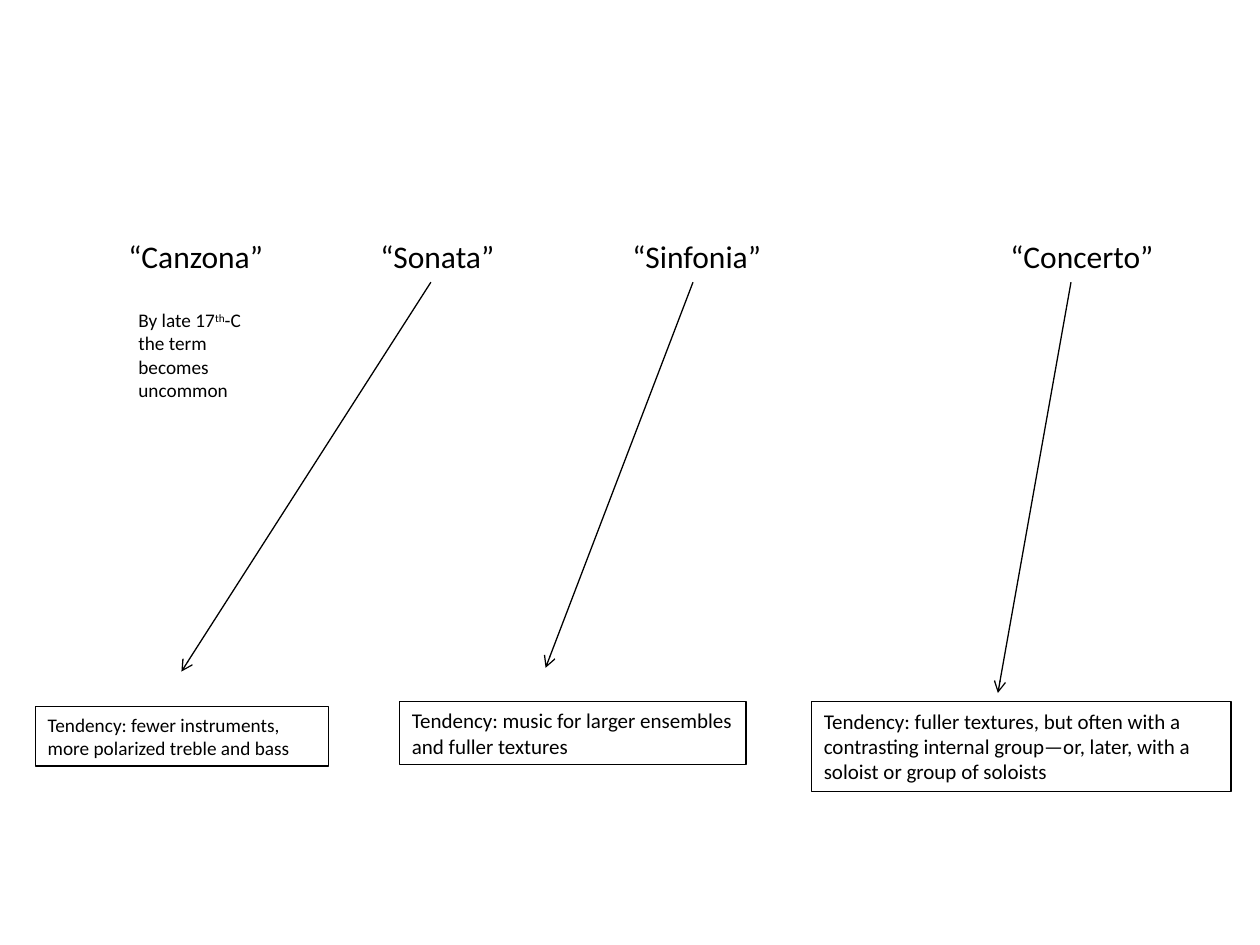
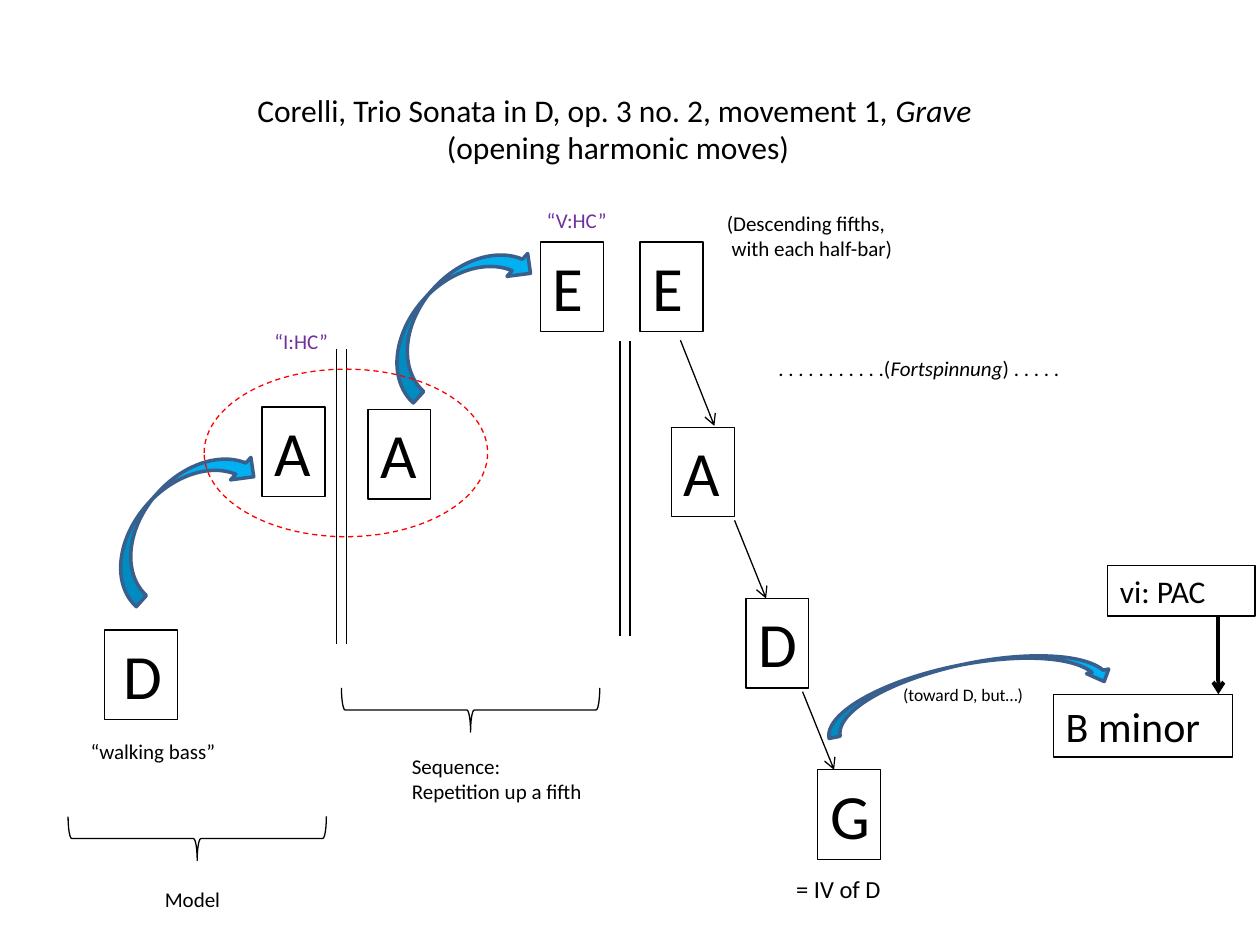
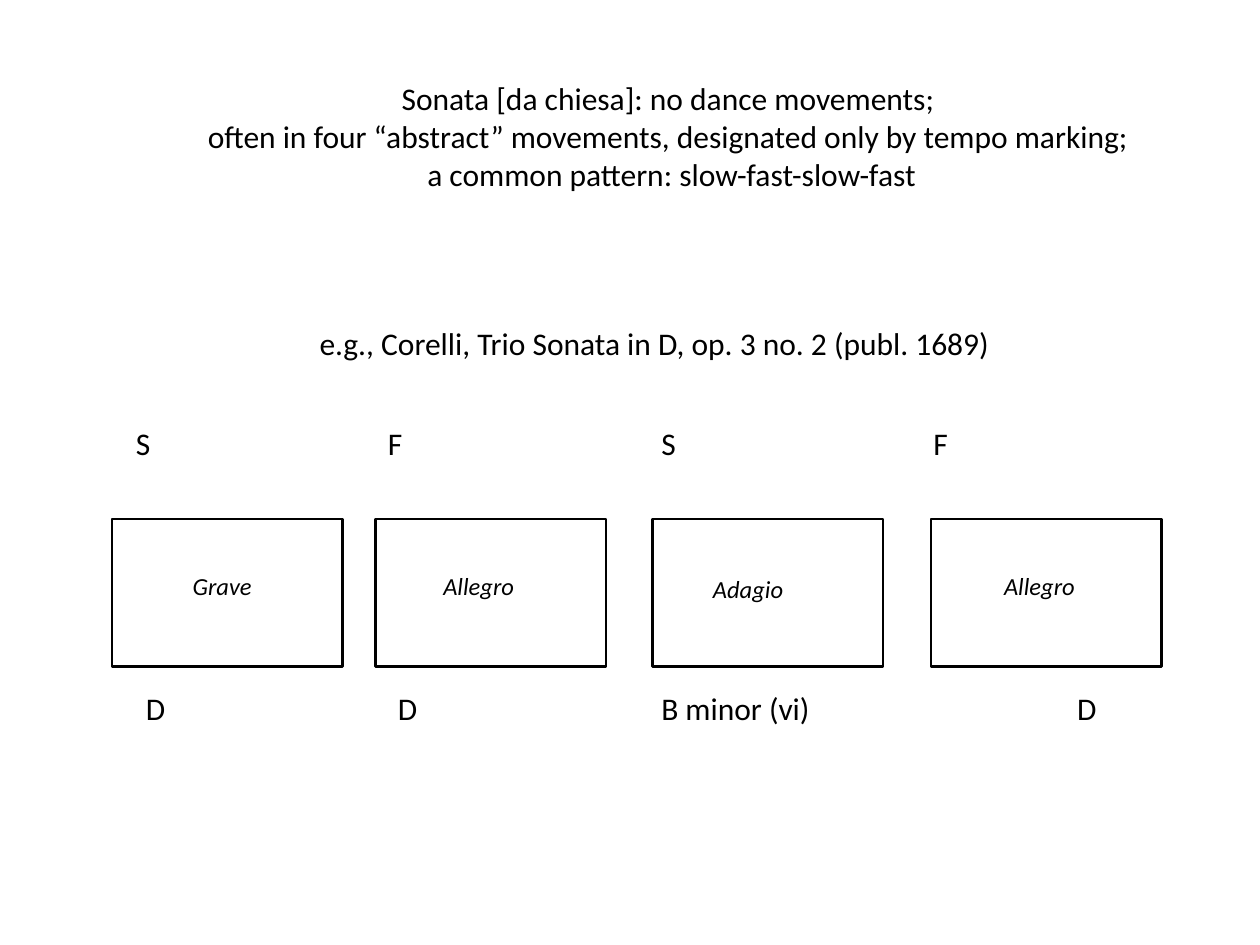
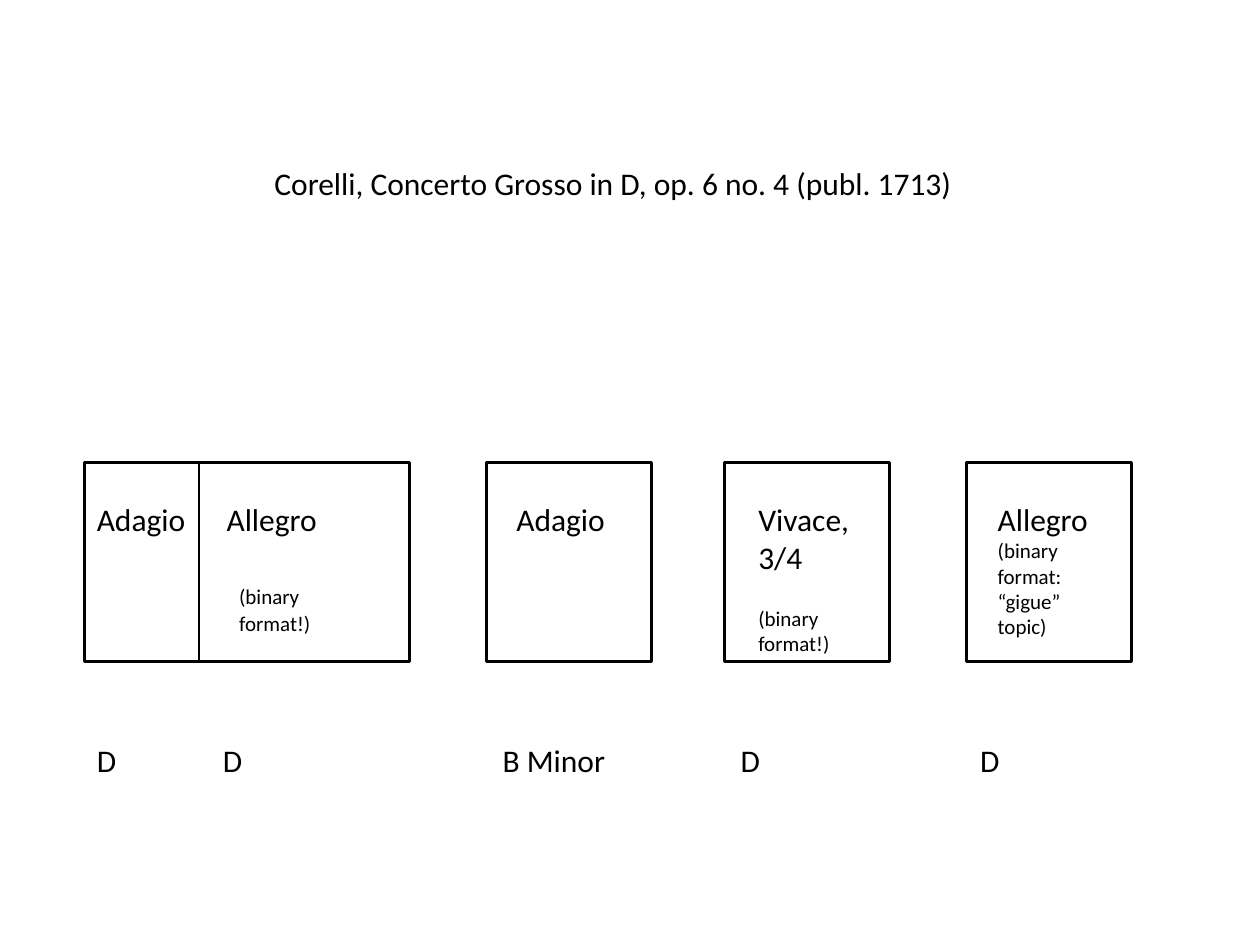
from dataclasses import dataclass

from lxml.etree import SubElement
from pptx import Presentation
from pptx.dml.color import RGBColor
from pptx.enum.dml import MSO_LINE
from pptx.enum.shapes import MSO_CONNECTOR, MSO_SHAPE
from pptx.enum.text import MSO_AUTO_SIZE, PP_ALIGN
from pptx.oxml.ns import qn
from pptx.util import Inches, Pt


@dataclass(frozen=True)
class Theme:
    font: str = "Calibri"
    ink: RGBColor = RGBColor(0x00, 0x00, 0x00)
    cadence: RGBColor = RGBColor(0x70, 0x30, 0xA0)
    leap: RGBColor = RGBColor(0x00, 0xB0, 0xF0)
    leap_edge: RGBColor = RGBColor(0x3A, 0x5F, 0x8C)
    highlight: RGBColor = RGBColor(0xFF, 0x00, 0x00)
    title: int = 18
    chord: int = 36
    key: int = 24
    tempo: int = 14
    note: int = 12
    small: int = 11
    tiny: int = 10
    hairline: float = 0.75


THEME = Theme()


def italic(font):
    font.italic = True


def superscript(font):
    font._element.set("baseline", "30000")


def outline(item, color=THEME.ink, width=THEME.hairline):
    item.line.color.rgb = color
    item.line.width = Pt(width)


def write(paragraph, content, size, color=THEME.ink, accent=italic):
    for position, part in enumerate(content.split("*")):
        if part:
            run = paragraph.add_run()
            run.text = part
            run.font.name = THEME.font
            run.font.size = Pt(size)
            run.font.color.rgb = color
            if position % 2:
                accent(run.font)


def add_text(slide, box, lines, size=THEME.note, color=THEME.ink,
             align=PP_ALIGN.LEFT, accent=italic, framed=False):
    label = slide.shapes.add_textbox(*map(Inches, box))
    frame = label.text_frame
    frame.word_wrap = True
    frame.auto_size = MSO_AUTO_SIZE.SHAPE_TO_FIT_TEXT
    for position, line in enumerate(lines):
        paragraph = frame.add_paragraph() if position else frame.paragraphs[0]
        paragraph.alignment = align
        content, line_size = line if isinstance(line, tuple) else (line, size)
        write(paragraph, content, line_size, color, accent)
    if framed:
        outline(label)
    return frame


def set_tabs(paragraph, stops):
    tabs = SubElement(paragraph._p.get_or_add_pPr(), qn("a:tabLst"))
    for stop in stops:
        SubElement(tabs, qn("a:tab"), pos=str(Inches(stop)), algn="l")


def add_columns(slide, box, entries, stops):
    frame = add_text(slide, box, ["\t".join(entries)], THEME.title)
    set_tabs(frame.paragraphs[0], stops)


def add_outline(slide, kind, box, width=THEME.hairline, color=THEME.ink, rotation=0):
    figure = slide.shapes.add_shape(kind, *map(Inches, box))
    figure.shadow.inherit = False
    figure.fill.background()
    figure.rotation = rotation
    outline(figure, color, width)
    return figure


def add_leap(slide, box, rotation):
    leap = add_outline(slide, MSO_SHAPE.CURVED_LEFT_ARROW, box, 2,
                       THEME.leap_edge, rotation)
    leap.fill.solid()
    leap.fill.fore_color.rgb = THEME.leap
    for flip in ("flipH", "flipV"):
        leap._element.spPr.xfrm.set(flip, "1")


def add_line(slide, start, end, width=THEME.hairline, arrow=False):
    line = slide.shapes.add_connector(MSO_CONNECTOR.STRAIGHT, *map(Inches, start + end))
    outline(line, width=width)
    if arrow:
        SubElement(line.line._get_or_add_ln(), qn("a:tailEnd"), type="arrow")
    SubElement(line._element.spPr, qn("a:effectLst"))


def add_double_bar(slide, left, top):
    for x in (left, left + 0.08):
        add_line(slide, (x, top), (x, top + 2.34))


def build_genres(slide):
    add_columns(slide, (0.92, 1.83, 8.5, 0.4),
                ["“Canzona”", "“Sonata”", "“Sinfonia”", "“Concerto”"], (2, 4, 7))
    for start, end in (((3.42, 2.24), (1.44, 5.33)),
                       ((5.5, 2.24), (4.33, 5.3)),
                       ((8.5, 2.24), (7.92, 5.5))):
        add_line(slide, start, end, arrow=True)
    tendencies = (
        ((0.28, 5.61, 2.33, 0.47), THEME.small,
         "fewer instruments, more polarized treble and bass"),
        ((3.17, 5.57, 2.75, 0.5), THEME.note,
         "music for larger ensembles and fuller textures"),
        ((6.44, 5.57, 3.33, 0.71), THEME.note,
         "fuller textures, but often with a contrasting internal group—or, later, "
         "with a soloist or group of soloists"),
    )
    for box, size, tendency in tendencies:
        add_text(slide, box, [f"Tendency: {tendency}"], size, framed=True)
    add_text(slide, (1, 2.4, 1.16, 0.84),
             ["By late 17*th*-C", "the term becomes uncommon"],
             THEME.small, accent=superscript)


def build_harmony(slide):
    add_text(slide, (1.53, 0.67, 6.75, 0.71),
             ["Corelli, Trio Sonata in D, op. 3 no. 2, movement 1, *Grave *",
              "(opening harmonic moves)"], THEME.title, align=PP_ALIGN.CENTER)
    add_double_bar(slide, 2.67, 2.77)
    add_double_bar(slide, 4.92, 2.71)

    add_text(slide, (0.88, 5, 0.5, 0.71), ["D"], THEME.chord)
    add_outline(slide, MSO_SHAPE.RECTANGLE, (0.83, 5, 0.58, 0.71), 1)
    for chord, left, top in (("A", 2.08, 3.23), ("A", 2.92, 3.25), ("E", 4.29, 1.92),
                             ("E", 5.08, 1.92), ("A", 5.33, 3.39), ("D", 5.92, 4.75),
                             ("G", 6.49, 6.11)):
        add_text(slide, (left, top, 0.5, 0.71), [chord], THEME.chord, framed=True)
    add_text(slide, (8.36, 5.51, 1.42, 0.5), ["B minor"], THEME.key, framed=True)
    add_text(slide, (8.79, 4.49, 1.17, 0.4), ["vi: PAC"], THEME.title, framed=True)

    add_leap(slide, (1.17, 3.34, 0.48, 1.51), 42.1)
    add_leap(slide, (3.36, 1.72, 0.49, 1.51), 42.1)
    add_leap(slide, (7.5, 4.29, 0.36, 2.32), 78.3)
    common_chord = add_outline(slide, MSO_SHAPE.OVAL, (1.62, 2.93, 2.25, 1.33),
                               color=THEME.highlight)
    common_chord.line.dash_style = MSO_LINE.DASH
    for left, top in ((3.56, 4.61), (1.39, 5.63)):
        add_outline(slide, MSO_SHAPE.LEFT_BRACE, (left, top, 0.35, 2.05), rotation=270)

    for start, end in (((5.4, 2.7), (5.67, 3.38)),
                       ((5.83, 4.13), (6.08, 4.75)),
                       ((6.37, 5.49), (6.62, 6.11))):
        add_line(slide, start, end, arrow=True)
    add_line(slide, (9.67, 4.9), (9.67, 5.51), 2.25, arrow=True)

    add_text(slide, (0.62, 5.81, 1.25, 0.3), ["“walking bass”"])
    add_text(slide, (1.21, 6.99, 0.89, 0.3), ["Model"])
    add_text(slide, (3.17, 5.93, 1.75, 0.5), ["Sequence:", "Repetition up a fifth"])
    add_text(slide, (5.67, 1.62, 2.42, 0.5),
             ["(Descending fifths,", " with each half-bar)"])
    add_text(slide, (6.08, 2.77, 3.29, 0.3),
             [". . . . . . . . . . .(*Fortspinnung*) . . . . ."])
    add_text(slide, (7.07, 5.38, 1.26, 0.27), ["(toward D, but…)"], THEME.tiny)
    add_text(slide, (6.22, 6.89, 1.08, 0.34), ["= IV of D"], THEME.tempo)
    add_text(slide, (2.08, 2.56, 0.67, 0.3), ["“I:HC”"], color=THEME.cadence)
    add_text(slide, (4.24, 1.6, 0.84, 0.3), ["“V:HC”"], color=THEME.cadence)


def build_church_sonata(slide):
    add_text(slide, (1.29, 0.58, 8.08, 1.01),
             ["Sonata [da chiesa]: no dance movements; ",
              "often in four “abstract” movements, designated only by tempo marking; ",
              "a common pattern: slow-fast-slow-fast"],
             THEME.title, align=PP_ALIGN.CENTER)
    add_text(slide, (1.82, 2.52, 6.75, 0.4),
             ["e.g., Corelli, Trio Sonata in D, op. 3 no. 2 (publ. 1689)"],
             THEME.title, align=PP_ALIGN.CENTER)
    add_columns(slide, (0.98, 3.32, 7.83, 0.4), "SFSF", (2, 4.17, 6.33))
    for tempo, left, tempo_left, tempo_top in (("Grave", 0.89, 1.43, 4.48),
                                               ("Allegro", 2.98, 3.42, 4.48),
                                               ("Adagio", 5.18, 5.56, 4.51),
                                               ("Allegro", 7.39, 7.87, 4.48)):
        add_outline(slide, MSO_SHAPE.RECTANGLE, (left, 4.12, 1.83, 1.17), 1.5)
        add_text(slide, (tempo_left, tempo_top, 0.88, 0.34), [f"*{tempo}*"], THEME.tempo)
    add_columns(slide, (1.06, 5.42, 8.17, 0.4), ["D", "D", "B minor (vi)", "D"],
                (2, 4.09, 7.39))


def build_concerto_grosso(slide):
    add_text(slide, (2.08, 1.25, 6.17, 0.4),
             ["Corelli, Concerto Grosso in D, op. 6 no. 4 (publ. 1713)"], THEME.title)
    for left, width in ((0.67, 2.58), (3.86, 1.31), (5.75, 1.31), (7.67, 1.31)):
        add_outline(slide, MSO_SHAPE.RECTANGLE, (left, 3.67, width, 1.58), 2)
    add_line(slide, (1.58, 3.67), (1.58, 5.25))

    opening = add_text(slide, (0.67, 3.92, 2.17, 1.21),
                       [("Adagio\tAllegro", THEME.title), "(binary", "format!)"])
    tempos, *form = opening.paragraphs
    set_tabs(tempos, [1.03])
    for paragraph, gap in zip(form, (26, 1)):
        paragraph.space_before = Pt(gap)
        paragraph._p.get_or_add_pPr().set("marL", str(Inches(1.13)))

    add_text(slide, (4, 3.92, 1, 0.4), ["Adagio"], THEME.title)
    vivace = add_text(slide, (5.92, 3.92, 1, 1.35),
                      [("Vivace,", THEME.title), ("3/4", THEME.title), "(binary format!)"])
    vivace.paragraphs[-1].space_before = Pt(17)
    add_text(slide, (7.82, 3.92, 1, 1.21),
             [("Allegro", THEME.title), "(binary format: “gigue” topic)"])
    add_columns(slide, (0.67, 5.83, 8.42, 0.4), ["D", "D", "B Minor", "D", "D"],
                (1, 3.22, 5.11, 7.01))


def main():
    deck = Presentation()
    deck.slide_width, deck.slide_height = Inches(10), Inches(7.5)
    for build in (build_genres, build_harmony, build_church_sonata, build_concerto_grosso):
        build(deck.slides.add_slide(deck.slide_layouts[6]))
    deck.save("out.pptx")


if __name__ == "__main__":
    main()
